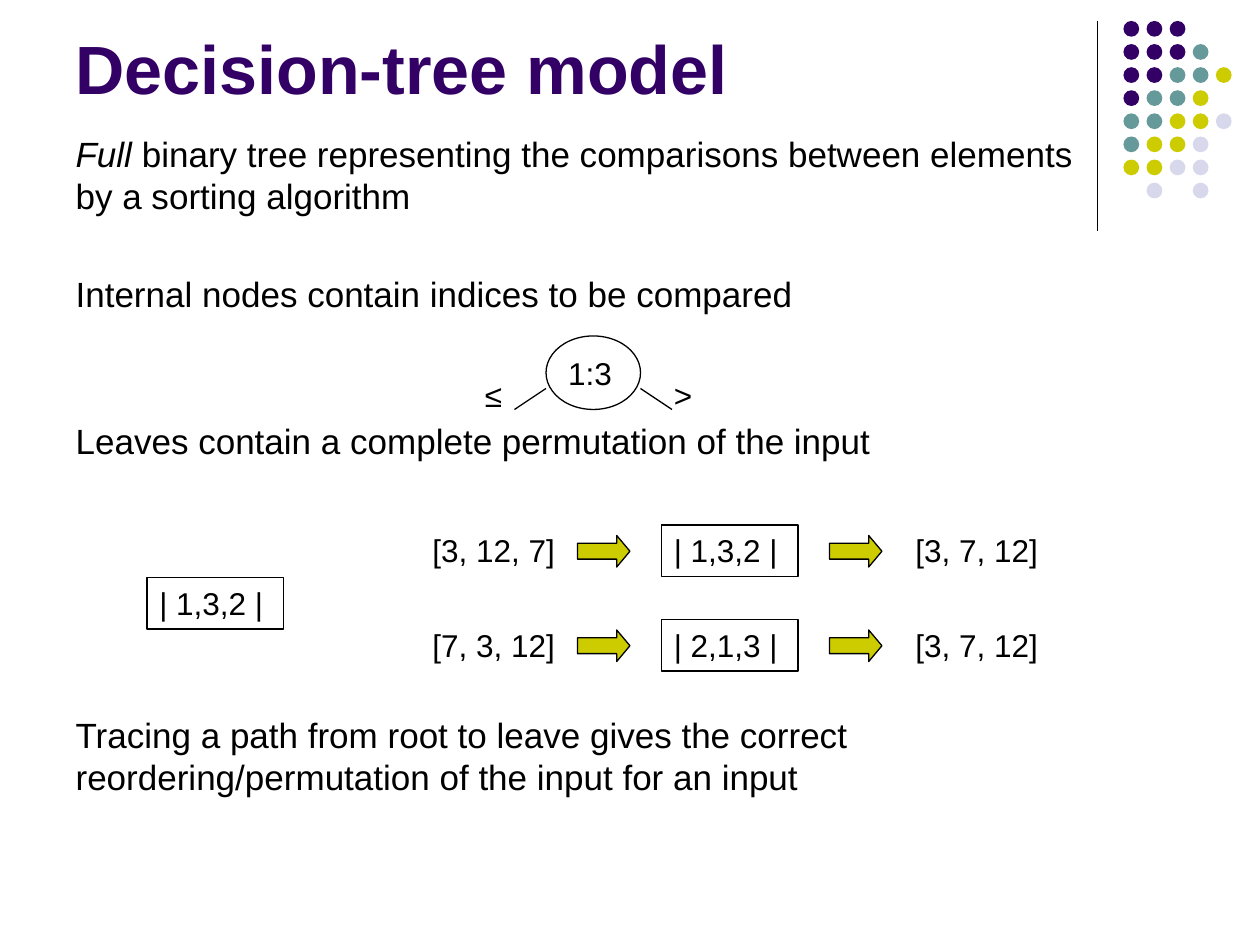
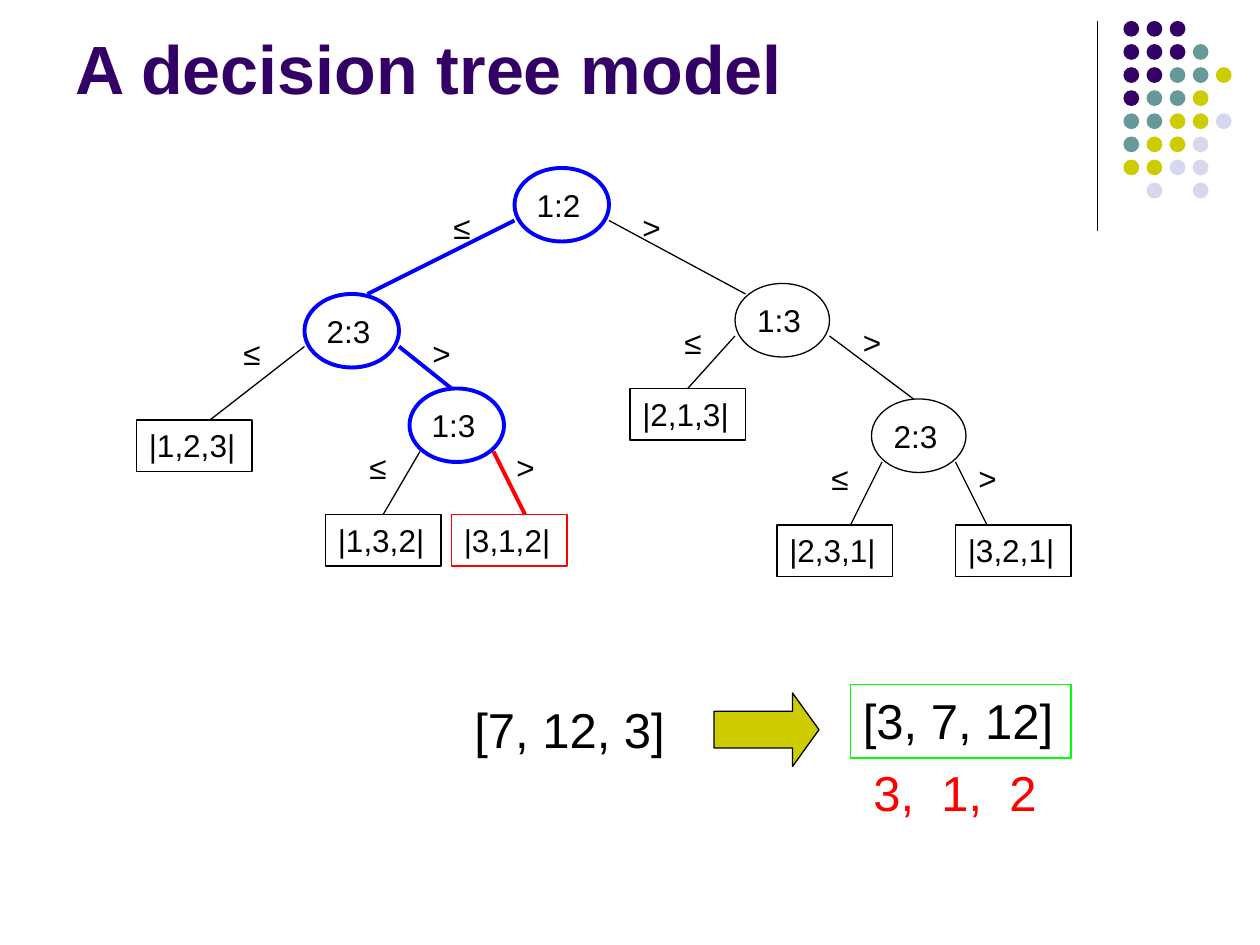
"""Build two slides on the decision-tree model of sorting, on a grid of 120 columns and 90 rows."""
import dataclasses
import pptx
import pptx.dml.color
import pptx.enum.shapes
import pptx.enum.text
import pptx.oxml
import pptx.oxml.ns
import pptx.util


@dataclasses.dataclass(frozen=True)
class Theme:
    font: str = "Arial"
    ink: str = "000000"
    purple: str = "330066"
    teal: str = "669999"
    olive: str = "CCCC00"
    lilac: str = "D8D8EC"
    path_taken: str = "0000FF"
    answer: str = "FF0000"
    sorted_box: str = "00FF00"
    title: int = 39
    body: int = 20
    label: int = 18
    example: int = 28
    thin: float = 0.75
    thick: float = 2.25


theme = Theme()
SHAPE = pptx.enum.shapes.MSO_SHAPE
ALIGN = pptx.enum.text.PP_ALIGN
ANCHOR = pptx.enum.text.MSO_ANCHOR
rgb = pptx.dml.color.RGBColor.from_string

deck = pptx.Presentation()
deck.slide_width = pptx.util.Inches(10)
deck.slide_height = pptx.util.Inches(7.5)
CELL = deck.slide_width / 120


def block(slide, kind, box, text="", line=None, fill=None, width=theme.thin,
          size=theme.label, color=theme.ink):
    """Place a shape, or a text box if kind is None, at (column, row, columns, rows)."""
    place = [round(length * CELL) for length in box]
    if kind is None:
        item = slide.shapes.add_textbox(*place)
    else:
        item = slide.shapes.add_shape(kind, *place)
        item.shadow.inherit = False
        for part, paint in ((item.fill, fill), (item.line.fill, line)):
            if paint:
                part.solid()
                part.fore_color.rgb = rgb(paint)
            else:
                part.background()
        if line:
            item.line.width = pptx.util.Pt(width)
    if text:
        oval = kind == SHAPE.OVAL
        frame = item.text_frame
        frame.word_wrap = not oval
        frame.vertical_anchor = ANCHOR.MIDDLE if oval else ANCHOR.TOP
        if oval:
            frame.margin_left = 0
            frame.margin_right = pptx.util.Inches(0.05)
        frame.text = text
        words = frame.paragraphs[0]
        words.alignment = ALIGN.CENTER if oval else ALIGN.LEFT
        words.font.color.rgb = rgb(color)
        for name, value in {"name": theme.font, "size": pptx.util.Pt(size)}.items():
            setattr(words.font, name, value)
    return item


def stroke(slide, start, end, color=theme.ink, width=theme.thin):
    """Draw a straight line between two (column, row) points."""
    ends = [round(length * CELL) for length in (*start, *end)]
    item = slide.shapes.add_connector(pptx.enum.shapes.MSO_CONNECTOR.STRAIGHT, *ends)
    item.line.color.rgb = rgb(color)
    item.line.width = pptx.util.Pt(width)
    item.element.spPr.append(pptx.oxml.parse_xml(
        f'<a:effectLst {pptx.oxml.ns.nsdecls("a")}/>'))
    return item


dot_rows = ["PPP", "PPPT", "PPTTY", "PTTY", "TTYYL", "TYYL", "YYLL", " L L"]
dot_colors = {"P": theme.purple, "T": theme.teal, "Y": theme.olive, "L": theme.lilac}
slides = []
for layout, heading in ((1, "Decision-tree model"), (5, "A decision tree model")):
    slide = deck.slides.add_slide(deck.slide_layouts[layout])
    slides.append(slide)
    stroke(slide, (104.5, 2), (104.5, 22))
    for row, dots in enumerate(dot_rows):
        for column, dot in enumerate(dots):
            if dot in dot_colors:
                block(slide, SHAPE.OVAL, (107 + 2.2 * column, 2 + 2.2 * row, 1.5, 1.5),
                      fill=dot_colors[dot])
    title = slide.shapes.title
    for side, length in {"left": 6, "top": 1.6, "width": 99, "height": 9.3}.items():
        setattr(title, side, round(length * CELL))
    title.text_frame.text = heading
    title.text_frame.vertical_anchor = ANCHOR.BOTTOM
    title.text_frame.auto_size = pptx.enum.text.MSO_AUTO_SIZE.NONE
    words = title.text_frame.paragraphs[0]
    words.alignment = ALIGN.LEFT
    words.font.color.rgb = rgb(theme.purple)
    for name, value in {"name": theme.font, "size": pptx.util.Pt(theme.title), "bold": True}.items():
        setattr(words.font, name, value)

model, tree = slides

statements = [
    (0, "Full", " binary tree representing the comparisons between elements by a sorting algorithm"),
    (32, "", "Internal nodes contain indices to be compared"),
    (60, "", "Leaves contain a complete permutation of the input"),
    (144, "", "Tracing a path from root to leave gives the correct "
              "reordering/permutation of the input for an input"),
]
body = model.placeholders[1]
for side, length in {"left": 6, "top": 12, "width": 98, "height": 75}.items():
    setattr(body, side, round(length * CELL))
body.text_frame.auto_size = pptx.enum.text.MSO_AUTO_SIZE.NONE
for index, (gap, stressed, plain) in enumerate(statements):
    words = body.text_frame.paragraphs[0] if index == 0 else body.text_frame.add_paragraph()
    words.space_before = pptx.util.Pt(gap)
    words.line_spacing = pptx.util.Pt(24)
    indents = words._p.get_or_add_pPr()
    for name in ("marL", "indent"):
        indents.set(name, "0")
    indents.append(pptx.oxml.parse_xml(f'<a:buNone {pptx.oxml.ns.nsdecls("a")}/>'))
    for text, italic in ((stressed, True), (plain, False)):
        if text:
            run = words.add_run()
            run.text = text
            run.font.color.rgb = rgb(theme.ink)
            for name, value in {"name": theme.font, "size": pptx.util.Pt(theme.body),
                                "italic": italic}.items():
                setattr(run.font, name, value)

block(model, SHAPE.OVAL, (52, 32, 9, 7), "1:3", theme.ink)
stroke(model, (52, 37), (49, 39))
stroke(model, (61, 37), (64, 39))
for column, sign in ((45, "≤"), (63, ">")):
    block(model, None, (column, 35.2, 5, 4.8), sign)

block(model, SHAPE.RECTANGLE, (14, 55, 13, 4.9), "| 1,3,2 |", theme.ink)
for row, given, leaf in ((50, "[3, 12, 7]", "| 1,3,2 |"), (59, "[7, 3, 12]", "| 2,1,3 |")):
    block(model, None, (40, row, 18, 4.8), given)
    block(model, SHAPE.RECTANGLE, (63, row, 13, 4.9), leaf, theme.ink)
    block(model, None, (86, row, 18, 4.8), "[3, 7, 12]")
    for column in (55, 79):
        arrow = block(model, SHAPE.RIGHT_ARROW, (column, row + 1, 5, 3),
                      line=theme.ink, fill=theme.olive)
        arrow.adjustments[1] = 0.42

leaf_places = {
    "|1,2,3|": (13, 40), "|1,3,2|": (31, 49), "|3,1,2|": (43, 49),
    "|2,1,3|": (60, 37), "|2,3,1|": (74, 50), "|3,2,1|": (91, 50),
}
leaves = {}
for leaf, (column, row) in leaf_places.items():
    outline = theme.answer if leaf == "|3,1,2|" else theme.ink
    leaves[leaf] = block(tree, SHAPE.RECTANGLE, (column, row, 11, 4.9), leaf, outline)

pens = {"plain": (theme.ink, theme.thin), "path": (theme.path_taken, theme.thick),
        "last": (theme.answer, theme.thick)}
nodes = [
    ("1:2", (49, 16), "path", 0, (-7, (35, 28), "path"), (11, (71, 28), "plain")),
    ("2:3", (29, 28), "path", 0, (-7, (20, 40), "plain"), (11, (43, 37), "path")),
    ("1:3", (70, 27), "plain", 0, (-6, "|2,1,3|", "plain"), (11, (87, 38), "plain")),
    ("1:3", (39, 37), "path", 1, (-5, "|1,3,2|", "plain"), (9, (50, 49), "last")),
    ("2:3", (83, 38), "plain", 1, (-5, (81, 50), "plain"), (9, (94, 50), "plain")),
]
for indices, (column, row), pen, steep, *branches in nodes:
    color, width = pens[pen]
    block(tree, SHAPE.OVAL, (column, row, 9, 7), indices, color, width=width)
    for sign, edge, (offset, target, branch_pen) in zip("≤>", (steep, 9 - steep), branches):
        start = (column + edge, row + 5 + steep)
        end = leaf_places.get(target, target)
        branch = stroke(tree, start, end, *pens[branch_pen])
        if target in leaves:
            branch.end_connect(leaves[target], 0)
        block(tree, None, (column + offset, row + 3.2 + 1.9 * steep, 5, 4.8), sign)

block(tree, None, (44, 66, 21, 6.8), "[7, 12, 3]", size=theme.example)
arrow = block(tree, SHAPE.RIGHT_ARROW, (68, 66, 10, 7), line=theme.ink, fill=theme.olive)
arrow.adjustments[1] = 0.36
block(tree, SHAPE.RECTANGLE, (81, 65.2, 21, 7), "[3, 7, 12]", theme.sorted_box, size=theme.example)
block(tree, None, (82, 72, 21, 6.8), "3,  1,  2", size=theme.example, color=theme.answer)

deck.save("out.pptx")
